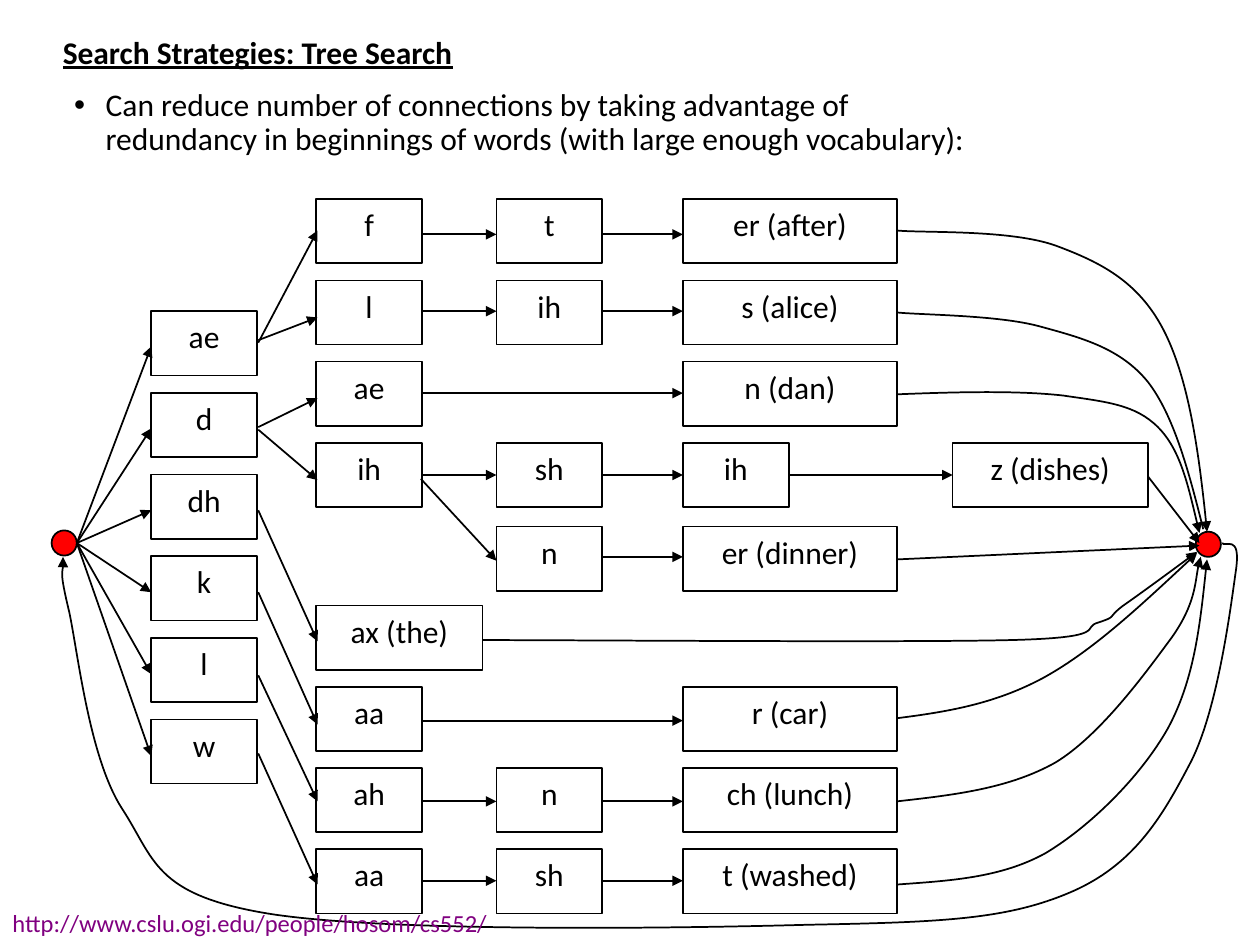
from lxml.etree import SubElement
from pptx import Presentation
from pptx.dml.color import RGBColor
from pptx.enum.shapes import MSO_CONNECTOR, MSO_SHAPE
from pptx.enum.text import MSO_ANCHOR, PP_ALIGN
from pptx.oxml.ns import qn
from pptx.util import Inches, Pt

prs = Presentation()
prs.slide_width, prs.slide_height = Inches(10), Inches(7.5)
shapes = prs.slides.add_slide(prs.slide_layouts[6]).shapes


def write(s, text, size=18, color="000000", align=PP_ALIGN.LEFT, bold=False, underline=False):
    tf = s.text_frame
    tf.word_wrap = True
    tf.vertical_anchor = MSO_ANCHOR.TOP
    p = tf.paragraphs[0]
    p.text = text
    p.alignment = align
    for r in p.runs:
        r.font.name, r.font.size = "Calibri", Pt(size)
        r.font.bold, r.font.underline = bold, underline
        r.font.color.rgb = RGBColor.from_string(color)
    return p


def outline(s, fill=None, arrow=False):
    """Give a shape or connector its thin black line, fill and arrowhead, without shadow."""
    s.line.color.rgb = RGBColor.from_string("000000")
    s.line.width = Pt(1)
    if arrow:
        SubElement(s.line._get_or_add_ln(), qn("a:tailEnd"), type="triangle")
    if hasattr(s, "fill"):
        if fill:
            s.fill.solid()
            s.fill.fore_color.rgb = RGBColor.from_string(fill)
        else:
            s.fill.background()
        s.shadow.inherit = False
    else:
        SubElement(s._element.spPr, qn("a:effectLst"))


# Heading and bullet
s = shapes.add_textbox(Inches(0.4), Inches(0.21), Inches(4.6), Inches(0.5))
write(s, "Search Strategies: Tree Search", bold=True, underline=True)

s = shapes.add_textbox(Inches(0.49), Inches(0.66), Inches(9.52), Inches(1.18))
p = write(s, "Can reduce number of connections by taking advantage of\v"
             "redundancy in beginnings of words (with large enough vocabulary):")
p.line_spacing = 0.9
pPr = p._p.get_or_add_pPr()
pPr.set("marL", str(Inches(0.25)))
pPr.set("indent", str(Inches(-0.25)))
SubElement(pPr, qn("a:buFont"), typeface="Arial")
SubElement(pPr, qn("a:buChar"), char="•")

# Phoneme boxes: (column, text, width) per row, joined left to right
COLS = [1.2, 2.51, 3.94, 5.42, 7.56]
TOP, PITCH, BOX_H = 1.58, 0.645, 0.51
NARROW, WIDE = 0.84, 1.7
FIRST_TOP, FIRST_PITCH = 2.47, 0.648

# (row, height of its arrows, boxes)
rows = [
    (0, 1.86, [(1, "f", NARROW), (2, "t", NARROW), (3, "er (after)", WIDE)]),
    (1, 2.47, [(1, "l", NARROW), (2, "ih", NARROW), (3, "s (alice)", WIDE)]),
    (2, 3.12, [(1, "ae", NARROW), (3, "n (dan)", WIDE)]),
    (3, 3.77, [(1, "ih", NARROW), (2, "sh", NARROW), (3, "ih", NARROW), (4, "z (dishes)", 1.55)]),
    (4.03, 4.42, [(2, "n", NARROW), (3, "er (dinner)", WIDE)]),
    (5, 5.08, [(1, "ax (the)", 1.32)]),
    (6, 5.72, [(1, "aa", NARROW), (3, "r (car)", WIDE)]),
    (7, 6.36, [(1, "ah", NARROW), (2, "n", NARROW), (3, "ch (lunch)", WIDE)]),
    (8, 6.99, [(1, "aa", NARROW), (2, "sh", NARROW), (3, "t (washed)", WIDE)]),
]
boxes = [(0, FIRST_TOP + i * FIRST_PITCH, text, NARROW)
         for i, text in enumerate(["ae", "d", "dh", "k", "l", "w"])]
arrows = []
for row, y, cells in rows:
    boxes += [(col, TOP + row * PITCH, text, w) for col, text, w in cells]
    arrows += [(COLS[a] + w, y, COLS[b], y) for (a, _, w), (b, _, _) in zip(cells, cells[1:])]

for col, top, text, w in boxes:
    s = shapes.add_shape(MSO_SHAPE.RECTANGLE, Inches(COLS[col]), Inches(top), Inches(w), Inches(BOX_H))
    outline(s)
    write(s, text, align=PP_ALIGN.CENTER)

# Start and end nodes
for x, y in [(0.41, 4.21), (9.49, 4.22)]:
    s = shapes.add_shape(MSO_SHAPE.OVAL, Inches(x), Inches(y), Inches(0.2), Inches(0.2))
    outline(s, fill="FF0000")

# Straight arrows: start node to first column, first column to second, and the rest
arrows += [(0.61, 4.31, COLS[0], 2.75 + i * 0.65) for i in range(6)]
branches = [(2.72, 1.83), (2.7, 2.52), (3.39, 3.16), (3.41, 3.81),
            (4.05, 5.09), (4.7, 5.75), (5.36, 6.36), (5.98, 7.02)]
arrows += [(2.05, y1, 2.52, y2) for y1, y2 in branches]
arrows += [(3.34, 3.8, 3.94, 4.45), (9.11, 3.78, 9.52, 4.31), (7.12, 4.44, 9.52, 4.33)]
for ends in arrows:
    s = shapes.add_connector(MSO_CONNECTOR.STRAIGHT, *[Inches(v) for v in ends])
    outline(s, arrow=True)

# Curves: (has arrowhead, start point followed by three points per Bézier segment)
curves = [
    (True, [(7.12, 1.83), (7.33, 1.85), (8.02, 1.82), (8.38, 1.95), (8.73, 2.08), (9.03, 2.23),
            (9.23, 2.61), (9.43, 2.99), (9.52, 3.61), (9.58, 4.22)]),
    (False, [(7.12, 2.48), (7.31, 2.5), (7.92, 2.5), (8.25, 2.59), (8.58, 2.68), (8.89, 2.76),
             (9.11, 3.03), (9.32, 3.3), (9.44, 3.76), (9.55, 4.2)]),
    (True, [(7.12, 3.13), (7.61, 3.11), (8.09, 3.1), (8.44, 3.14), (8.78, 3.19), (9.01, 3.21),
            (9.19, 3.39), (9.37, 3.57), (9.44, 3.9), (9.52, 4.23)]),
    (True, [(7.12, 5.7), (7.51, 5.65), (7.89, 5.59), (8.28, 5.38), (8.68, 5.16), (9.09, 4.77),
            (9.5, 4.39)]),
    (True, [(7.12, 6.36), (7.57, 6.31), (8.01, 6.26), (8.38, 6.05), (8.74, 5.83), (9.1, 5.33),
            (9.3, 5.06), (9.49, 4.79), (9.49, 4.53), (9.53, 4.42)]),
    (True, [(7.12, 7.02), (7.53, 6.99), (7.94, 6.97), (8.3, 6.77), (8.65, 6.56), (9.05, 6.17),
            (9.27, 5.78), (9.48, 5.39), (9.53, 4.91), (9.58, 4.44)]),
    (True, [(3.83, 5.08), (4.53, 5.08), (7.2, 5.1), (8.02, 5.08), (8.83, 5.06), (8.57, 4.98),
            (8.72, 4.94), (8.87, 4.89), (8.78, 4.91), (8.91, 4.81), (9.04, 4.72), (9.38, 4.47),
            (9.5, 4.38)]),
    (True, [(9.7, 4.31), (9.72, 4.35), (9.85, 4.23), (9.81, 4.52), (9.77, 4.8), (9.67, 5.62),
            (9.45, 6.05), (9.23, 6.47), (9.01, 6.86), (8.5, 7.08), (7.99, 7.3), (7.47, 7.32),
            (6.41, 7.34), (5.34, 7.37), (3.03, 7.4), (2.12, 7.25), (1.22, 7.1), (1.23, 6.82),
            (0.97, 6.42), (0.71, 6.02), (0.62, 5.19), (0.55, 4.86), (0.47, 4.53), (0.51, 4.51),
            (0.5, 4.42)]),
]
for arrow, points in curves:
    start, *rest = [(Inches(x), Inches(y)) for x, y in points]
    builder = shapes.build_freeform(*start)
    builder.add_line_segments(rest, close=False)
    s = builder.convert_to_shape()
    outline(s, arrow=arrow)
    # Turn every three line segments into one Bézier segment
    track = next(s._element.iter(qn("a:path")))
    for i, line in enumerate(track.findall(qn("a:lnTo"))):
        if i % 3 == 0:
            bezier = SubElement(track, qn("a:cubicBezTo"))
        bezier.append(line[0])
        track.remove(line)

# Source address
s = shapes.add_textbox(0, Inches(7.16), Inches(5.58), Inches(0.34))
write(s, "http://www.cslu.ogi.edu/people/hosom/cs552/", size=14, color="800080")

prs.save("out.pptx")
